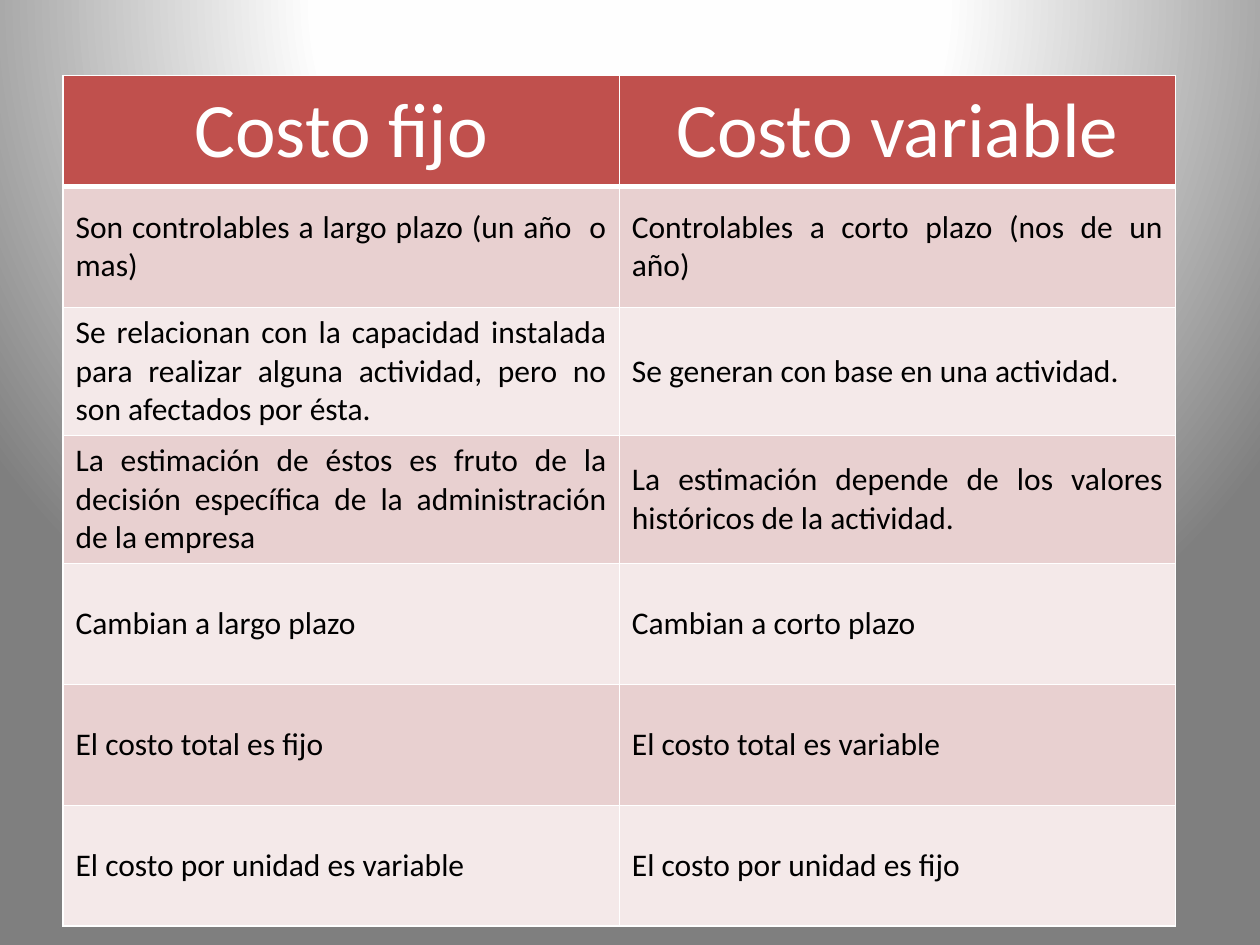
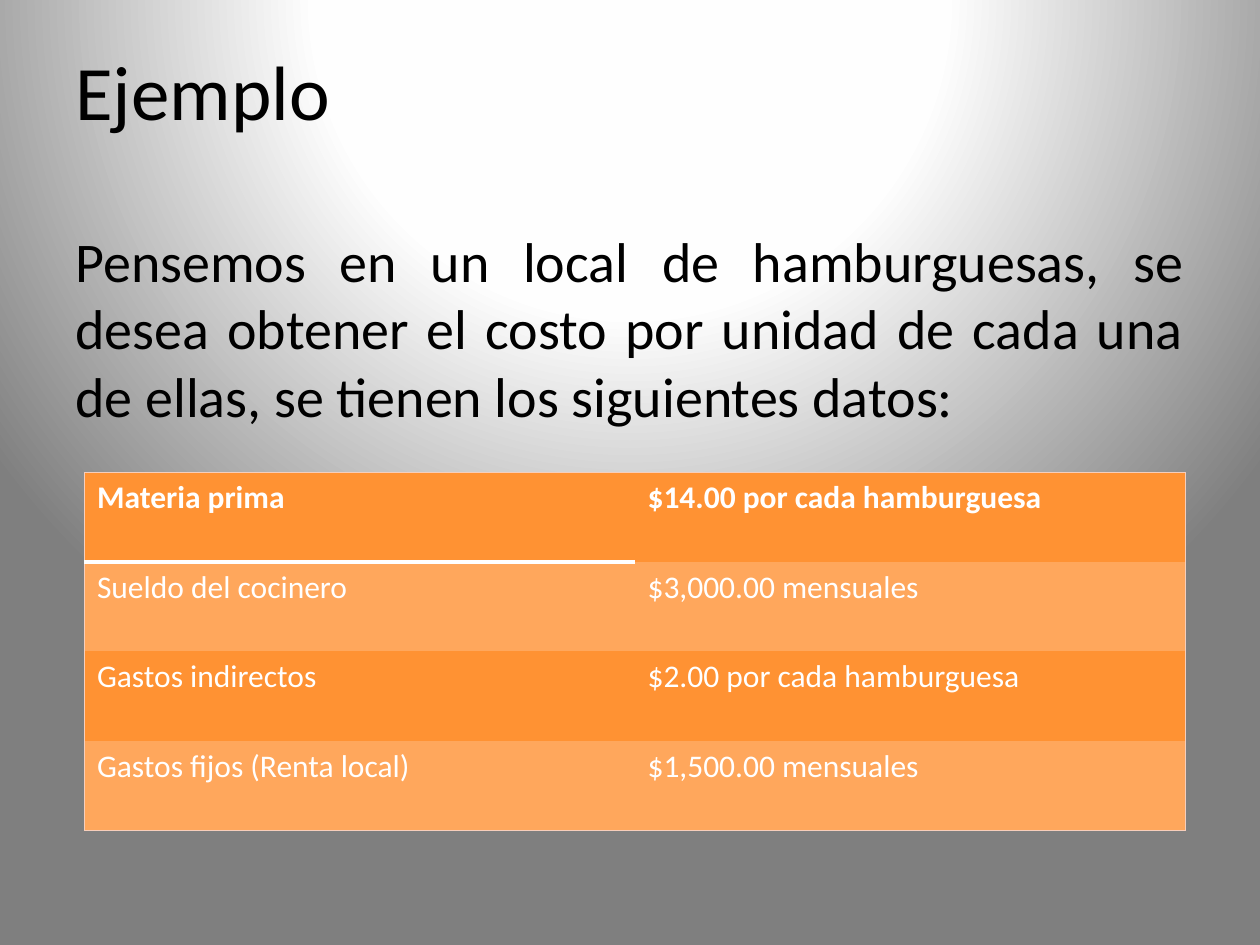
import pptx
import pptx.dml.color
import pptx.enum.text
import pptx.oxml
import pptx.oxml.ns
import pptx.util

Inches, Pt = pptx.util.Inches, pptx.util.Pt
RGB = pptx.dml.color.RGBColor.from_string
ALIGN = pptx.enum.text.PP_ALIGN
ANCHOR = pptx.enum.text.MSO_ANCHOR
qn = pptx.oxml.ns.qn
NS = pptx.oxml.ns.nsdecls("a")

COLORS = {
    "white": "FFFFFF", "black": "000000", "glow": "FEFEFE", "gray": "7F7F7F",
    "red": "C0504D", "pink": "E8D0D0", "pale": "F4E9E9",
    "orange": "FF9233", "apricot": "FFA75C", "edge": "F7CEBB",
}
BACKDROP = [(0, "white"), (40, "glow"), (100, "gray")]
NO_STYLE = "{2D5ABB26-0587-4C30-8999-92F81FD0307C}"

COST_TYPES = [
    ("Costo fijo", "Costo variable"),
    ("Son controlables a largo plazo (un año  o mas)",
     "Controlables a corto plazo (nos de un año)"),
    ("Se relacionan con la capacidad instalada para realizar alguna actividad, "
     "pero no son afectados por ésta.",
     "Se generan con base en una actividad."),
    ("La estimación de éstos es fruto de la decisión específica de la "
     "administración de la empresa",
     "La estimación depende de los valores históricos de la actividad."),
    ("Cambian a largo plazo", "Cambian a corto plazo"),
    ("El costo total es fijo", "El costo total es variable"),
    ("El costo por unidad es variable", "El costo por unidad es fijo"),
]
BURGER_COSTS = [
    ("Materia prima", "$14.00 por cada hamburguesa"),
    ("Sueldo del cocinero", "$3,000.00 mensuales"),
    ("Gastos indirectos", "$2.00 por cada hamburguesa"),
    ("Gastos fijos (Renta local)", "$1,500.00 mensuales"),
]
TEXTS = [
    ("Ejemplo", (0.5, 0.3, 9, 1.25), {"size": 44}, ALIGN.LEFT),
    ("Pensemos en un local de hamburguesas, se desea obtener el costo por unidad "
     "de cada una de ellas, se tienen los siguientes datos:",
     (0.5, 1.75, 9, 1.92), {"size": 32}, ALIGN.JUSTIFY),
]

COST_STYLE = {
    "at": (0.5, 0.6), "col": 4.415, "rows": [0.88] + [0.96] * 6,
    "fills": ["red"] + ["pink", "pale"] * 3, "anchor": ANCHOR.MIDDLE,
    "aligns": (ALIGN.CENTER, ALIGN.JUSTIFY),
    "head": {"size": 44, "color": "white"}, "body": {"size": 18},
}
BURGER_STYLE = {
    "at": (0.67, 3.75), "col": 4.37, "rows": [0.71] * 4,
    "fills": ["orange", "apricot"] * 2, "anchor": ANCHOR.TOP,
    "aligns": (ALIGN.LEFT, ALIGN.LEFT),
    "head": {"size": 18, "color": "white", "bold": True},
    "body": {"size": 18, "color": "white"},
}


def cost_borders(row, col):
    sides = dict.fromkeys("LRTB", ("white", 1))
    if row == 0:
        sides["B"] = ("white", 3)
    return sides


def burger_borders(row, col):
    last = len(BURGER_COSTS) - 1
    outer = {"L": col == 0, "R": col == 1, "T": row == 0, "B": row == last}
    sides = {side: ("edge", 0.75) for side, on in outer.items() if on}
    if (row, col) == (0, 0):
        sides["B"] = ("white", 3)
    return sides


def write(tf, text, fmt, align):
    p = tf.paragraphs[0]
    p.alignment = align
    r = p.add_run()
    r.text = text
    values = {"name": "Calibri", "bold": False, "color": "black", **fmt}
    r.font.color.rgb = RGB(COLORS[values.pop("color")])
    values["size"] = Pt(values["size"])
    for name, value in values.items():
        setattr(r.font, name, value)


def set_borders(cell, sides):
    tc_pr = cell._tc.get_or_add_tcPr()
    for side in "LRTB":
        if side in sides:
            color, width = sides[side]
            tc_pr.append(pptx.oxml.parse_xml(
                f'<a:ln{side} {NS} w="{Pt(width)}"><a:solidFill>'
                f'<a:srgbClr val="{COLORS[color]}"/></a:solidFill></a:ln{side}>'))


def add_table(s, data, style, borders):
    left, top = style["at"]
    frame = s.shapes.add_table(
        len(data), len(data[0]), Inches(left), Inches(top),
        Inches(style["col"] * len(data[0])), Inches(sum(style["rows"])))
    table = frame.table
    table.first_row = table.horz_banding = False
    table._tbl.tblPr.find(qn("a:tableStyleId")).text = NO_STYLE
    for column in table.columns:
        column.width = Inches(style["col"])
    for i, texts in enumerate(data):
        table.rows[i].height = Inches(style["rows"][i])
        for j, text in enumerate(texts):
            cell = table.cell(i, j)
            cell.vertical_anchor = style["anchor"]
            set_borders(cell, borders(i, j))
            cell.fill.solid()
            cell.fill.fore_color.rgb = RGB(COLORS[style["fills"][i]])
            write(cell.text_frame, text, style["body" if i else "head"],
                  style["aligns"][min(i, 1)])


def add_text(s, text, box, fmt, align):
    tf = s.shapes.add_textbox(*map(Inches, box)).text_frame
    tf.word_wrap = True
    write(tf, text, fmt, align)


def set_backdrop(master):
    master.background.fill.gradient()
    grad = master.element.find(".//" + qn("p:bgPr")).find(qn("a:gradFill"))
    stops = "".join(
        f'<a:gs pos="{pos * 1000}"><a:srgbClr val="{COLORS[color]}"/></a:gs>'
        for pos, color in BACKDROP)
    new = pptx.oxml.parse_xml(
        f'<a:gradFill {NS} rotWithShape="1"><a:gsLst>{stops}</a:gsLst>'
        '<a:path path="circle"><a:fillToRect l="50000" t="-80000" r="50000" '
        'b="180000"/></a:path></a:gradFill>')
    grad.getparent().replace(grad, new)


def main():
    prs = pptx.Presentation()
    prs.slide_width, prs.slide_height = Inches(10), Inches(7.5)
    set_backdrop(prs.slide_master)
    blank = prs.slide_layouts[6]

    s = prs.slides.add_slide(blank)
    add_table(s, COST_TYPES, COST_STYLE, cost_borders)

    s = prs.slides.add_slide(blank)
    for text in TEXTS:
        add_text(s, *text)
    add_table(s, BURGER_COSTS, BURGER_STYLE, burger_borders)

    prs.save("out.pptx")


if __name__ == "__main__":
    main()
